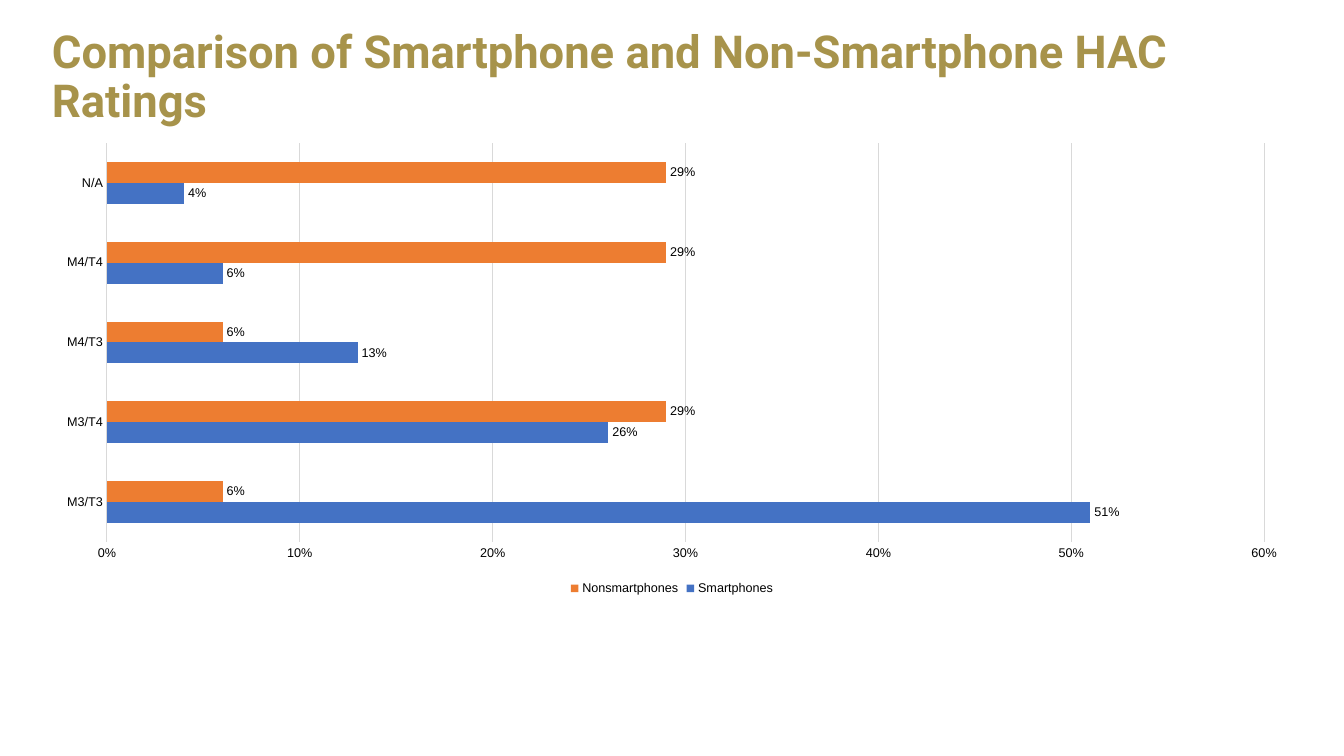
"""Build a slide comparing HAC ratings of smartphones and non-smartphones."""
from dataclasses import dataclass

from pptx import Presentation
from pptx.chart.data import CategoryChartData
from pptx.dml.color import RGBColor
from pptx.enum import chart as charts, text
from pptx.util import Pt


@dataclass(frozen=True)
class Theme:
    title_color: RGBColor = RGBColor.from_string("A7934B")
    text_color: RGBColor = RGBColor.from_string("000000")
    line_color: RGBColor = RGBColor.from_string("D9D9D9")
    smartphone_color: RGBColor = RGBColor.from_string("4472C4")
    nonsmartphone_color: RGBColor = RGBColor.from_string("ED7D31")
    title_font: str = "Roboto"
    chart_font: str = "Arial"
    title_size: Pt = Pt(32.4)
    chart_size: Pt = Pt(10)
    label_size: Pt = Pt(9)


def style_font(font, name, size, color):
    font.name = name
    font.size = size
    font.color.rgb = color


theme = Theme()
ratings = ["M3/T3", "M3/T4", "M4/T3", "M4/T4", "N/A"]
phones = [
    ("Smartphones", [0.51, 0.26, 0.13, 0.06, 0.04], theme.smartphone_color),
    ("Nonsmartphones", [0.06, 0.29, 0.06, 0.29, 0.29], theme.nonsmartphone_color),
]

presentation = Presentation()
presentation.slide_width = Pt(960)
presentation.slide_height = Pt(540)
slide = presentation.slides.add_slide(presentation.slide_layouts[6])

title = slide.shapes.add_textbox(Pt(30), Pt(16), Pt(900), Pt(80))
title.text_frame.word_wrap = True
title.text_frame.vertical_anchor = text.MSO_ANCHOR.MIDDLE
paragraph = title.text_frame.paragraphs[0]
paragraph.text = "Comparison of Smartphone and Non-Smartphone HAC Ratings"
paragraph.line_spacing = 0.9
paragraph.font.bold = True
style_font(paragraph.font, theme.title_font, theme.title_size, theme.title_color)

chart_data = CategoryChartData(number_format="0%")
chart_data.categories = ratings
for name, values, color in phones:
    chart_data.add_series(name, values)
chart = slide.shapes.add_chart(
    charts.XL_CHART_TYPE.BAR_CLUSTERED, Pt(30), Pt(95.6), Pt(900), Pt(332.8), chart_data
).chart
chart.has_title = False
style_font(chart.font, theme.chart_font, theme.chart_size, theme.text_color)

chart.has_legend = True
chart.legend.position = charts.XL_LEGEND_POSITION.BOTTOM
chart.legend.include_in_layout = False
style_font(chart.legend.font, theme.chart_font, theme.label_size, theme.text_color)

for axis in (chart.category_axis, chart.value_axis):
    axis.major_tick_mark = axis.minor_tick_mark = charts.XL_TICK_MARK.NONE
    style_font(axis.tick_labels.font, theme.chart_font, theme.label_size, theme.text_color)

value_axis = chart.value_axis
value_axis.minimum_scale = 0
value_axis.maximum_scale = 0.6
value_axis.major_unit = 0.1
value_axis.tick_labels.number_format = "0%"
value_axis.tick_labels.number_format_is_linked = False
value_axis.format.line.fill.background()
chart.category_axis.has_major_gridlines = False
value_axis.has_major_gridlines = True
for line in (chart.category_axis.format.line, value_axis.major_gridlines.format.line):
    line.color.rgb = theme.line_color
    line.width = Pt(0.75)

plot = chart.plots[0]
plot.gap_width = 182
plot.overlap = 0
plot.vary_by_categories = False
for series, (name, values, color) in zip(plot.series, phones):
    series.format.fill.solid()
    series.format.fill.fore_color.rgb = color
    series.invert_if_negative = False
    labels = series.data_labels
    labels.show_value = True
    labels.position = charts.XL_LABEL_POSITION.OUTSIDE_END
    labels.number_format = "0%"
    labels.number_format_is_linked = False
    style_font(labels.font, theme.chart_font, theme.label_size, theme.text_color)

presentation.save("out.pptx")
